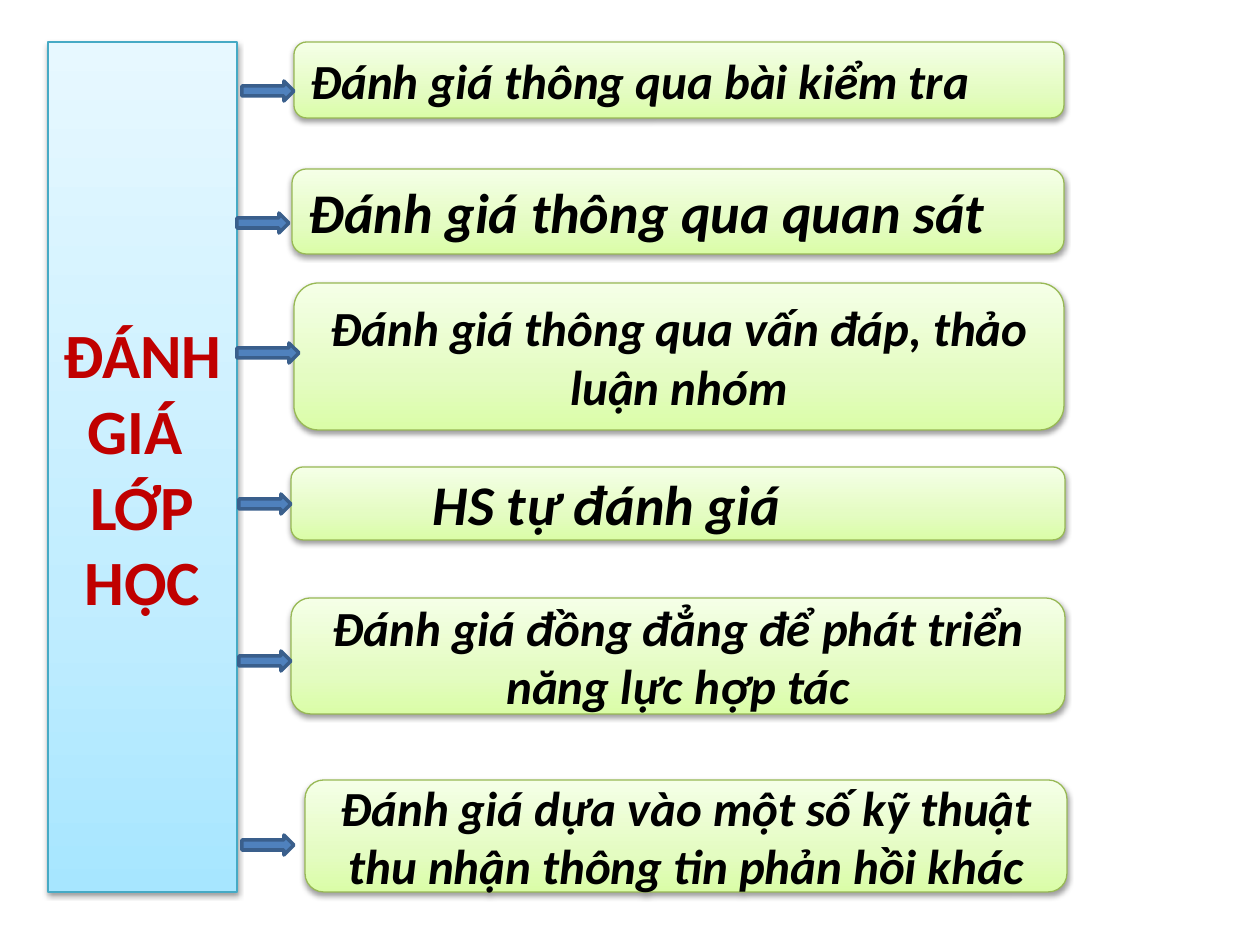
from lxml import etree
from pptx import Presentation
from pptx import util as u
from pptx.dml.color import RGBColor
from pptx.enum import shapes, text
from pptx.oxml.ns import qn

PX = 914400 / 126
BLUE_STOPS = ("A7E6FF", "C1EDFF", "E7F8FF")
GREEN_STOPS = ("DAFDA7", "E4FCC2", "F5FFE7")
LEFT, CENTER = text.PP_ALIGN.LEFT, text.PP_ALIGN.CENTER
ARROW_HEIGHT = 20

METHODS = [
    ((294, 42, 770, 76), (242, 81, 52), "Đánh giá thông qua bài kiểm tra", 28, LEFT, 0),
    ((292, 169, 772, 85), (237, 213, 52), "Đánh giá thông qua quan sát", 32, LEFT, 0),
    ((294, 283, 770, 147), (237, 343, 62), "Đánh giá thông qua vấn đáp, thảo luận nhóm", 28, CENTER, 0),
    ((291, 467, 774, 73), (239, 494, 52), "HS tự đánh giá", 32, LEFT, 126),
    ((291, 598, 774, 116), (239, 651, 52), "Đánh giá đồng đẳng để phát triển năng lực hợp tác", 28, CENTER, 0),
    ((305, 780, 762, 112), (242, 835, 52), "Đánh giá dựa vào một số kỹ thuật thu nhận thông tin phản hồi khác", 28, CENTER, 0),
]


def px(length):
    """Turn px into EMU."""
    return u.Emu(round(length * PX))


def color(value):
    """Turn a hex string into a colour."""
    return RGBColor.from_string(value)


def add_block(page, kind, box, line, width):
    """Add an outlined preset shape without a shadow."""
    block = page.shapes.add_shape(kind, *map(px, box))
    block.shadow.inherit = False
    block.line.color.rgb = color(line)
    block.line.width = u.Pt(width)
    return block


def shade(block, stops):
    """Give a block an upward gradient and a soft shadow below."""
    block.fill.gradient()
    gradient = block.fill._xPr.find(qn("a:gradFill"))
    stop_list = gradient.find(qn("a:gsLst"))
    for stop in list(stop_list):
        stop_list.remove(stop)
    for position, value in zip((0, 35000, 100000), stops):
        stop = etree.SubElement(stop_list, qn("a:gs"), pos=str(position))
        etree.SubElement(stop, qn("a:srgbClr"), val=value)
    gradient.find(qn("a:lin")).set("ang", "16200000")
    effects = block._element.spPr.find(qn("a:effectLst"))
    shadow = etree.SubElement(effects, qn("a:outerShdw"), blurRad="40000",
                              dist="20000", dir="5400000", rotWithShape="0")
    tint = etree.SubElement(shadow, qn("a:srgbClr"), val="000000")
    etree.SubElement(tint, qn("a:alpha"), val="38000")


def write(block, lines, size, ink, align, italic=False, indent=0):
    """Write bold paragraphs into a block, centred vertically."""
    frame = block.text_frame
    frame.word_wrap = True
    frame.vertical_anchor = text.MSO_ANCHOR.MIDDLE
    for index, line in enumerate(lines):
        para = frame.add_paragraph() if index else frame.paragraphs[0]
        para.alignment = align
        if indent:
            para._p.get_or_add_pPr().set("marL", str(px(indent)))
        span = para.add_run()
        span.text = line
        span.font.name = "Calibri"
        span.font.size = u.Pt(size)
        span.font.bold = True
        span.font.italic = italic
        span.font.color.rgb = color(ink)


def add_topic(page, box):
    """Add the tall topic panel."""
    panel = add_block(page, shapes.MSO_SHAPE.RECTANGLE, box, "46AAC5", 0.75)
    shade(panel, BLUE_STOPS)
    write(panel, ("ĐÁNH GIÁ ", "LỚP HỌC"), 36, "C00000", CENTER)


def add_method(page, box, label, size, align, indent):
    """Add one rounded method box."""
    card = add_block(page, shapes.MSO_SHAPE.ROUNDED_RECTANGLE, box, "98B955", 0.75)
    shade(card, GREEN_STOPS)
    write(card, (label,), size, "000000", align, True, indent)


def add_arrow(page, left, top, width):
    """Add a block arrow from the topic to a method."""
    arrow = add_block(page, shapes.MSO_SHAPE.RIGHT_ARROW,
                      (left, top, width, ARROW_HEIGHT), "3A5F8C", 2)
    arrow.fill.solid()
    arrow.fill.fore_color.rgb = color("4F81BD")


def main():
    """Build and save the deck."""
    deck = Presentation()
    deck.slide_width, deck.slide_height = px(1260), px(945)
    page = deck.slides.add_slide(deck.slide_layouts[6])
    add_topic(page, (48, 42, 189, 850))
    for box, arrow, label, size, align, indent in METHODS:
        add_method(page, box, label, size, align, indent)
        add_arrow(page, *arrow)
    deck.save("out.pptx")


if __name__ == "__main__":
    main()
